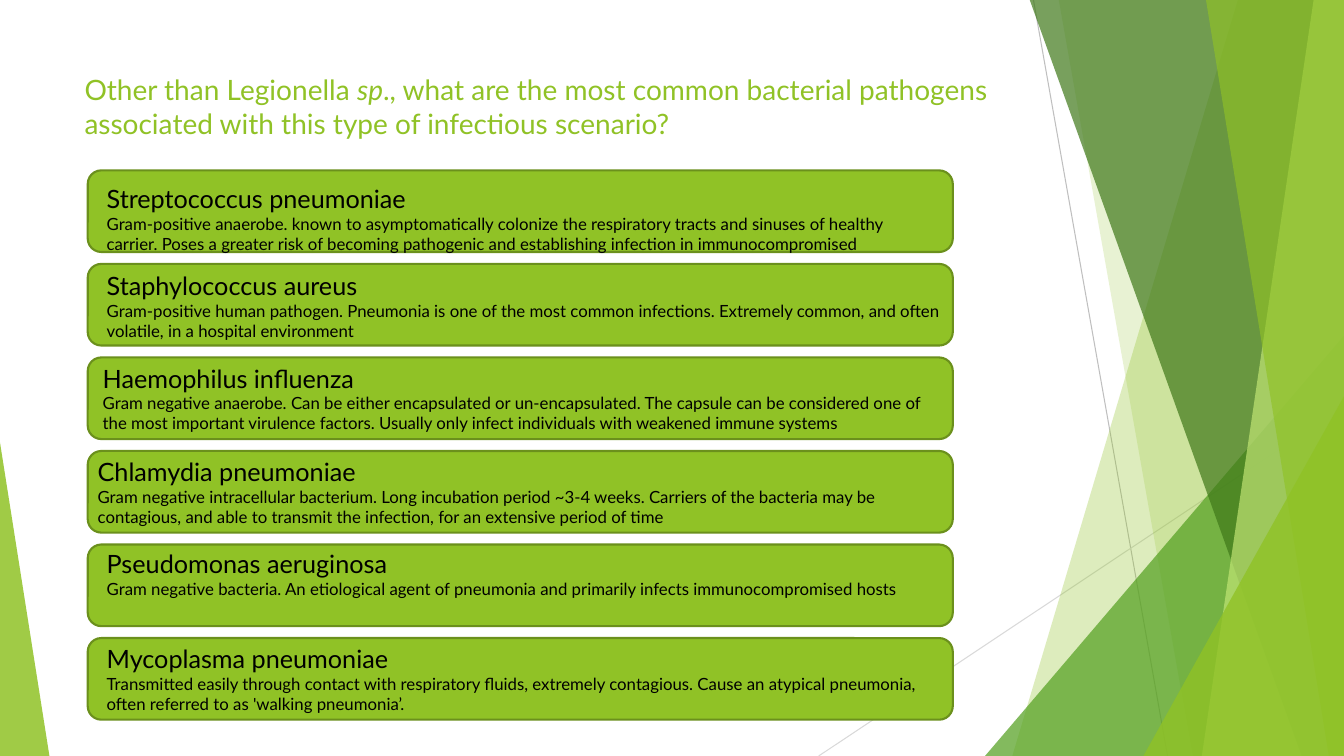
from lxml.etree import SubElement
from pptx import Presentation
from pptx.dml.color import RGBColor
from pptx.enum.shapes import MSO_CONNECTOR, MSO_SHAPE
from pptx.enum.text import MSO_ANCHOR, MSO_AUTO_SIZE, PP_ALIGN
from pptx.oxml.ns import qn
from pptx.util import Inches, Pt

FONT = "Lato"
LIME = RGBColor(0x90, 0xC2, 0x26)
OLIVE = RGBColor(0x6B, 0x90, 0x1C)
LEAF = RGBColor(0x54, 0xA0, 0x21)
FOREST = RGBColor(0x3F, 0x78, 0x19)
PALE_LIME = RGBColor(0xC0, 0xE4, 0x74)
GRAY = RGBColor(0xBF, 0xBF, 0xBF)
LIGHT_GRAY = RGBColor(0xD9, 0xD9, 0xD9)
BLACK = RGBColor(0, 0, 0)

WIDTH, HEIGHT = 13.33, 7.5
BAND_TOP = -0.01
CARD_LEFT, CARD_WIDTH, CARD_HEIGHT = 0.87, 8.58, 0.81
FIRST_CARD, LAST_CARD = 1.69, 6.33

# Name, description, and left, top and width of the text
PATHOGENS = [
    ("Streptococcus pneumoniae",
     "Gram-positive anaerobe. known to asymptomatically colonize the respiratory "
     "tracts and sinuses of healthy carrier. Poses a greater risk of becoming "
     "pathogenic and establishing infection in immunocompromised",
     0.96, 1.77, 8.36),
    ("Staphylococcus aureus",
     "Gram-positive human pathogen. Pneumonia is one of the most common infections. "
     "Extremely common, and often volatile, in a hospital environment",
     0.96, 2.63, 8.49),
    ("Haemophilus influenza",
     "Gram negative anaerobe. Can be either encapsulated or un-encapsulated. The "
     "capsule can be considered one of the most important virulence factors. "
     "Usually only infect individuals with weakened immune systems",
     0.92, 3.55, 8.49),
    ("Chlamydia pneumoniae",
     "Gram negative intracellular bacterium. Long incubation period ~3-4 weeks. "
     "Carriers of the bacteria may be contagious, and able to transmit the "
     "infection, for an extensive period of time",
     0.87, 4.48, 8.58),
    ("Pseudomonas aeruginosa",
     "Gram negative bacteria. An etiological agent of pneumonia and primarily "
     "infects immunocompromised hosts",
     0.96, 5.39, 8.49),
    ("Mycoplasma pneumoniae",
     "Transmitted easily through contact with respiratory fluids, extremely "
     "contagious. Cause an atypical pneumonia, often referred to as 'walking "
     "pneumonia’.",
     0.96, 6.33, 8.36),
]


def add_hairline(page, start, end, color):
    line = page.shapes.add_connector(
        MSO_CONNECTOR.STRAIGHT, *(Inches(value) for value in start + end))
    line.line.color.rgb = color
    line.line.width = Pt(0.75)
    SubElement(line._element.spPr, qn("a:effectLst"))


def paint(shape, color, opacity):
    shape.shadow.inherit = False
    shape.fill.solid()
    shape.fill.fore_color.rgb = color
    shape.line.fill.background()
    color_node = shape._element.spPr.find(qn("a:solidFill"))[0]
    SubElement(color_node, qn("a:alpha"), val=str(opacity * 1000))


def add_band(page, top_left, bottom_left, color, opacity):
    """Slanted band that reaches the right edge of the slide."""
    corners = [(top_left, BAND_TOP), (WIDTH, BAND_TOP),
               (WIDTH, HEIGHT), (bottom_left, HEIGHT)]
    points = [(Inches(x), Inches(y)) for x, y in corners]
    builder = page.shapes.build_freeform(*points[0])
    builder.add_line_segments(points[1:], close=True)
    paint(builder.convert_to_shape(), color, opacity)


def add_wedge(page, left, top, width, apex, color, opacity):
    """Triangle that stands on the bottom edge of the slide."""
    wedge = page.shapes.add_shape(
        MSO_SHAPE.ISOSCELES_TRIANGLE, Inches(left), Inches(top),
        Inches(width), Inches(HEIGHT - top))
    wedge.adjustments[0] = apex
    paint(wedge, color, opacity)


def add_text(page, left, top, width, height, paragraphs, color):
    """Each paragraph is a size and a list of (text, italic) spans."""
    box = page.shapes.add_textbox(
        Inches(left), Inches(top), Inches(width), Inches(height))
    frame = box.text_frame
    frame.word_wrap = True
    frame.auto_size = MSO_AUTO_SIZE.NONE
    frame.vertical_anchor = MSO_ANCHOR.TOP
    for index, (size, spans) in enumerate(paragraphs):
        para = frame.add_paragraph() if index else frame.paragraphs[0]
        para.alignment = PP_ALIGN.LEFT
        para.font.name = FONT
        para.font.size = Pt(size)
        para.font.color.rgb = color
        for text, italic in spans:
            span = para.add_run()
            span.text = text
            if italic:
                span.font.italic = True


def add_card(page, top):
    card = page.shapes.add_shape(
        MSO_SHAPE.ROUNDED_RECTANGLE, Inches(CARD_LEFT), Inches(top),
        Inches(CARD_WIDTH), Inches(CARD_HEIGHT))
    card.shadow.inherit = False
    card.fill.solid()
    card.fill.fore_color.rgb = LIME
    card.line.color.rgb = OLIVE
    card.line.width = Pt(1.5)


def add_backdrop(page):
    add_hairline(page, (10.25, 0), (11.58, HEIGHT), GRAY)
    add_hairline(page, (WIDTH, 4.03), (8.12, HEIGHT), LIGHT_GRAY)
    add_band(page, 12.28, 10.04, LIME, 30)
    add_band(page, 10.5, 11.83, LIME, 20)
    add_wedge(page, 9.77, 3.33, 3.56, 1, LEAF, 72)
    add_band(page, 10.21, 12.91, FOREST, 70)
    add_band(page, 13.03, 11.92, PALE_LIME, 70)
    add_band(page, 11.96, 13.18, LIME, 65)
    add_wedge(page, 11.34, 3.93, 1.99, 1, LIME, 80)
    add_wedge(page, 0, 4.39, 0.49, 0, LIME, 85)


def main():
    deck = Presentation()
    deck.slide_width, deck.slide_height = Inches(WIDTH), Inches(HEIGHT)
    page = deck.slides.add_slide(deck.slide_layouts[6])

    add_backdrop(page)

    # Title
    title = [("Other than Legionella ", False), ("sp", True),
             ("., what are the most common bacterial pathogens associated with "
              "this type of infectious scenario?", False)]
    add_text(page, 0.74, 0.67, 9.4, 0.83, [(20, title)], LIME)

    # Pathogen cards, evenly spaced, with their text on top
    pitch = (LAST_CARD - FIRST_CARD) / (len(PATHOGENS) - 1)
    for index in range(len(PATHOGENS)):
        add_card(page, FIRST_CARD + index * pitch)
    for name, description, left, top, width in PATHOGENS:
        add_text(page, left, top, width, CARD_HEIGHT,
                 [(18, [(name, False)]), (12, [(description, False)])], BLACK)

    deck.save("out.pptx")


if __name__ == "__main__":
    main()
